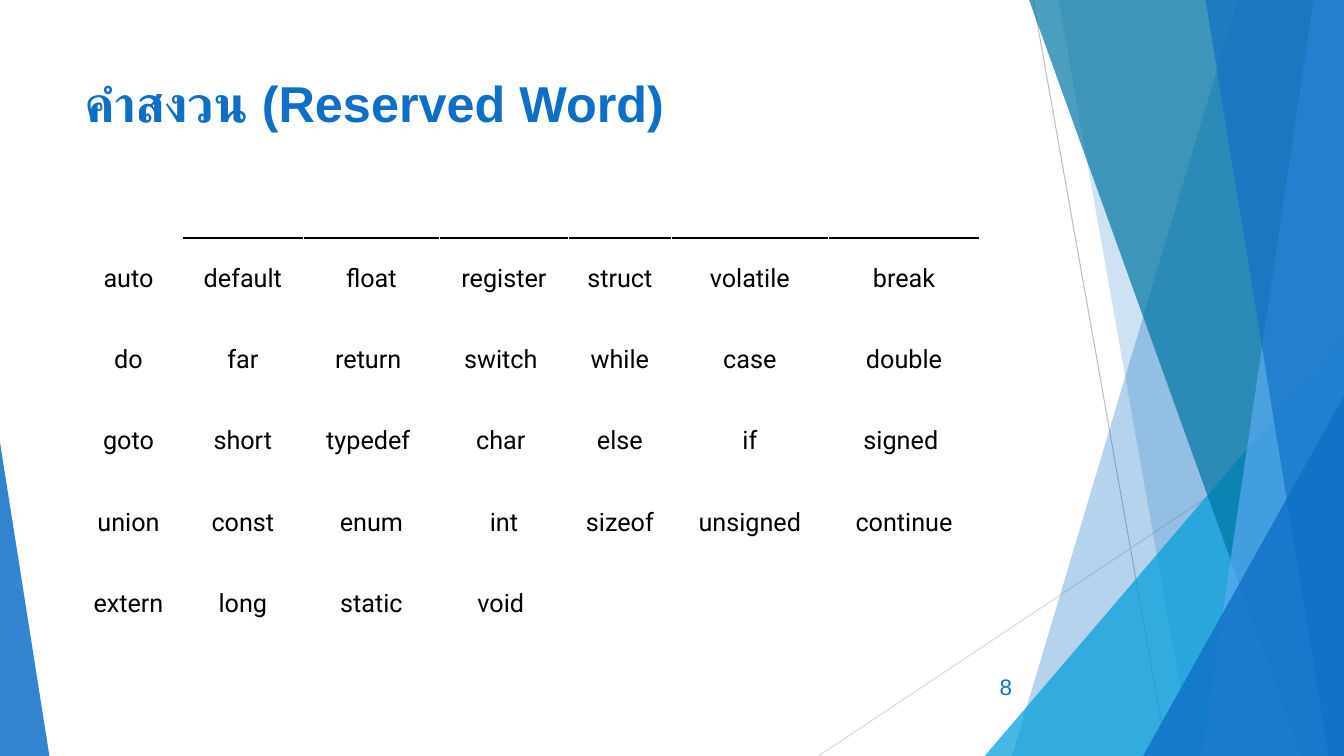
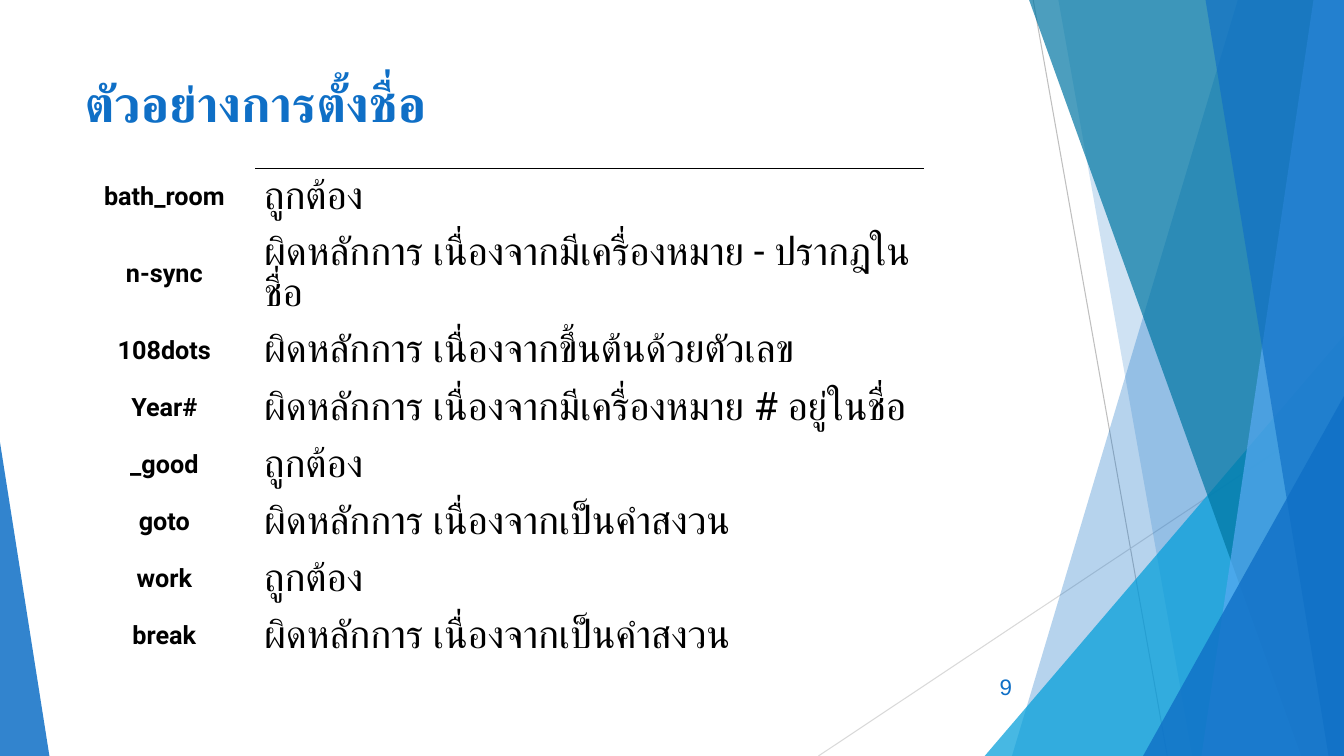
from dataclasses import dataclass

from lxml import etree
from pptx import Presentation
from pptx.dml.color import RGBColor
from pptx.enum.shapes import MSO_CONNECTOR, MSO_SHAPE
from pptx.enum.text import MSO_ANCHOR, PP_ALIGN
from pptx.oxml.ns import qn
from pptx.shapes.autoshape import Shape
from pptx.slide import Slide
from pptx.table import Table
from pptx.text.text import TextFrame
from pptx.util import Pt

TRIANGLE = MSO_SHAPE.ISOSCELES_TRIANGLE
STRAIGHT = MSO_CONNECTOR.STRAIGHT
LEFT, CENTER, RIGHT = PP_ALIGN.LEFT, PP_ALIGN.CENTER, PP_ALIGN.RIGHT
TOP, MIDDLE = MSO_ANCHOR.TOP, MSO_ANCHOR.MIDDLE

WIDTH, HEIGHT = 960, 540
MARGIN_LEFT = 53.3
HEADING_FONT, TABLE_FONT = "Arial", "Roboto"
COLORS = {
    "blue": "0F6FC6",
    "cyan": "009DD9",
    "teal": "0076A3",
    "sky": "59AAF2",
    "line": "BFBFBF",
    "pale_line": "D9D9D9",
    "black": "000000",
}


@dataclass(frozen=True)
class Ray:
    start: tuple[float, float]
    end: tuple[float, float]
    color: str


@dataclass(frozen=True)
class Band:
    """A slanted left edge, filled as far as the right side of the slide."""
    top_x: float
    bottom_x: float
    color: str
    opacity: int


@dataclass(frozen=True)
class Wedge:
    """A right triangle standing on the bottom of the slide."""
    left: float
    top: float
    width: float
    apex: float
    color: str
    opacity: int


@dataclass(frozen=True)
class Column:
    width: float
    size: float = 18
    bold: bool = False
    align: PP_ALIGN = CENTER
    line_spacing: float = 1.0


RAYS = [
    Ray((738, 0), (833.8, HEIGHT), "line"),
    Ray((WIDTH, 290.2), (584.6, HEIGHT), "pale_line"),
]
FACETS = [
    Band(884.2, 722.9, "blue", 30),
    Band(756, 851.8, "blue", 20),
    Wedge(703.4, 239.8, 256.6, 1, "cyan", 72),
    Band(735.1, 929.5, "teal", 70),
    Band(938.2, 858.2, "sky", 70),
    Band(861.1, 949, "blue", 65),
    Wedge(816.5, 283, 143.5, 1, "blue", 80),
    Wedge(0, 316, 35.3, 0, "blue", 85),
]

WORD_COLUMNS = [Column(width) for width in (77, 86.4, 97.2, 92.2, 73.4, 112.3, 108)]
RESERVED_WORDS = [
    ("auto", "default", "float", "register", "struct", "volatile", "break"),
    ("do", "far", "return ", "switch ", "while", "case", "double"),
    ("goto", "short", "typedef ", "char ", "else", "if", "signed "),
    ("union", "const", "enum", "int", "sizeof", "unsigned", "continue"),
    ("extern", "long", "static", "void "),
]

NAME_COLUMNS = [
    Column(128.2, bold=True),
    Column(478.8, size=28, align=LEFT, line_spacing=0.9),
]
CORRECT = "ถูกต้อง"
RESERVED = "ผิดหลักการ เนื่องจากเป็นคำสงวน"
NAME_EXAMPLES = [
    ("bath_room", CORRECT),
    ("n-sync", "ผิดหลักการ เนื่องจากมีเครื่องหมาย - ปรากฎในชื่อ"),
    ("108dots", "ผิดหลักการ เนื่องจากขึ้นต้นด้วยตัวเลข"),
    ("Year#", "ผิดหลักการ เนื่องจากมีเครื่องหมาย # อยู่ในชื่อ"),
    ("_good", CORRECT),
    ("goto", RESERVED),
    ("work", CORRECT),
    ("break", RESERVED),
]
NAME_ROW, TWO_LINE_ROW = 40.8, 69


def rgb(color: str) -> RGBColor:
    return RGBColor.from_string(COLORS[color])


def write_text(frame: TextFrame, text: str, *, size: float, font: str = HEADING_FONT,
               color: str = "blue", bold: bool = False, align: PP_ALIGN = LEFT,
               line_spacing: float = 1.0) -> None:
    frame.word_wrap = True
    paragraph = frame.paragraphs[0]
    paragraph.alignment = align
    paragraph.line_spacing = line_spacing
    run = paragraph.add_run()
    run.text = text
    run.font.size = Pt(size)
    run.font.bold = bold
    run.font.name = font
    run.font.color.rgb = rgb(color)
    properties = run._r.get_or_add_rPr()
    etree.SubElement(properties, qn("a:cs"), typeface=font)


def add_text(slide: Slide, text: str, left: float, top: float, width: float,
             height: float, *, anchor: MSO_ANCHOR = TOP, **text_format) -> None:
    box = slide.shapes.add_textbox(Pt(left), Pt(top), Pt(width), Pt(height))
    box.text_frame.vertical_anchor = anchor
    write_text(box.text_frame, text, **text_format)


def add_ray(slide: Slide, ray: Ray) -> None:
    ends = [Pt(value) for value in (*ray.start, *ray.end)]
    connector = slide.shapes.add_connector(STRAIGHT, *ends)
    connector.line.color.rgb = rgb(ray.color)
    connector.line.width = Pt(0.75)
    etree.SubElement(connector._element.spPr, qn("a:effectLst"))


def build_band(slide: Slide, band: Band) -> Shape:
    corners = [(WIDTH, 0), (WIDTH, HEIGHT), (band.bottom_x, HEIGHT)]
    builder = slide.shapes.build_freeform(Pt(band.top_x), Pt(0))
    builder.add_line_segments([(Pt(x), Pt(y)) for x, y in corners], close=True)
    return builder.convert_to_shape()


def build_wedge(slide: Slide, wedge: Wedge) -> Shape:
    shape = slide.shapes.add_shape(TRIANGLE, Pt(wedge.left), Pt(wedge.top),
                                   Pt(wedge.width), Pt(HEIGHT - wedge.top))
    shape.adjustments[0] = wedge.apex
    return shape


def add_facet(slide: Slide, facet: Band | Wedge) -> None:
    build = build_band if isinstance(facet, Band) else build_wedge
    shape = build(slide, facet)
    shape.shadow.inherit = False
    shape.line.fill.background()
    shape.fill.solid()
    shape.fill.fore_color.rgb = rgb(facet.color)
    color = shape._element.spPr.find(qn("a:solidFill"))[0]
    etree.SubElement(color, qn("a:alpha"), val=str(facet.opacity * 1000))


def rule_top(table: Table) -> None:
    """Draw a line above the first row, from the second column on."""
    for cell in list(table.rows[0].cells)[1:]:
        border = etree.Element(qn("a:lnT"), w=str(Pt(1)))
        fill = etree.SubElement(border, qn("a:solidFill"))
        etree.SubElement(fill, qn("a:srgbClr"), val=COLORS["black"])
        cell._tc.get_or_add_tcPr().insert(0, border)


def add_word_table(slide: Slide, rows: list[tuple[str, ...]], columns: list[Column],
                   top: float, row_heights: list[float]) -> None:
    width = sum(column.width for column in columns)
    frame = slide.shapes.add_table(len(rows), len(columns), Pt(MARGIN_LEFT), Pt(top),
                                   Pt(width), Pt(sum(row_heights)))
    table = frame.table
    table.first_row = table.horz_banding = False
    for table_column, column in zip(table.columns, columns):
        table_column.width = Pt(column.width)
    for table_row, height in zip(table.rows, row_heights):
        table_row.height = Pt(height)
    for cell in table.iter_cells():
        cell.fill.background()
        cell.vertical_anchor = MIDDLE
    for row_index, words in enumerate(rows):
        for column_index, (word, column) in enumerate(zip(words, columns)):
            write_text(table.cell(row_index, column_index).text_frame, word,
                       size=column.size, font=TABLE_FONT, color="black",
                       bold=column.bold, align=column.align,
                       line_spacing=column.line_spacing)
    rule_top(table)


def add_slide(presentation: Presentation, title: str, number: int) -> Slide:
    """Add a slide with the shared background, title and page number."""
    slide = presentation.slides.add_slide(presentation.slide_layouts[6])
    for ray in RAYS:
        add_ray(slide, ray)
    for facet in FACETS:
        add_facet(slide, facet)
    add_text(slide, title, MARGIN_LEFT, 48, 677, 104, size=36, bold=True)
    add_text(slide, str(number), 676, 476, 54, 29, size=16, align=RIGHT, anchor=MIDDLE)
    return slide


def main() -> None:
    presentation = Presentation()
    presentation.slide_width, presentation.slide_height = Pt(WIDTH), Pt(HEIGHT)

    slide = add_slide(presentation, "คำสงวน (Reserved Word)", 8)
    add_word_table(slide, RESERVED_WORDS, WORD_COLUMNS, 170,
                   [58.1] * len(RESERVED_WORDS))

    slide = add_slide(presentation, "ตัวอย่างการตั้งชื่อ", 9)
    heights = [TWO_LINE_ROW if name == "n-sync" else NAME_ROW
               for name, _ in NAME_EXAMPLES]
    add_word_table(slide, NAME_EXAMPLES, NAME_COLUMNS, 120.2, heights)

    presentation.save("out.pptx")


if __name__ == "__main__":
    main()
